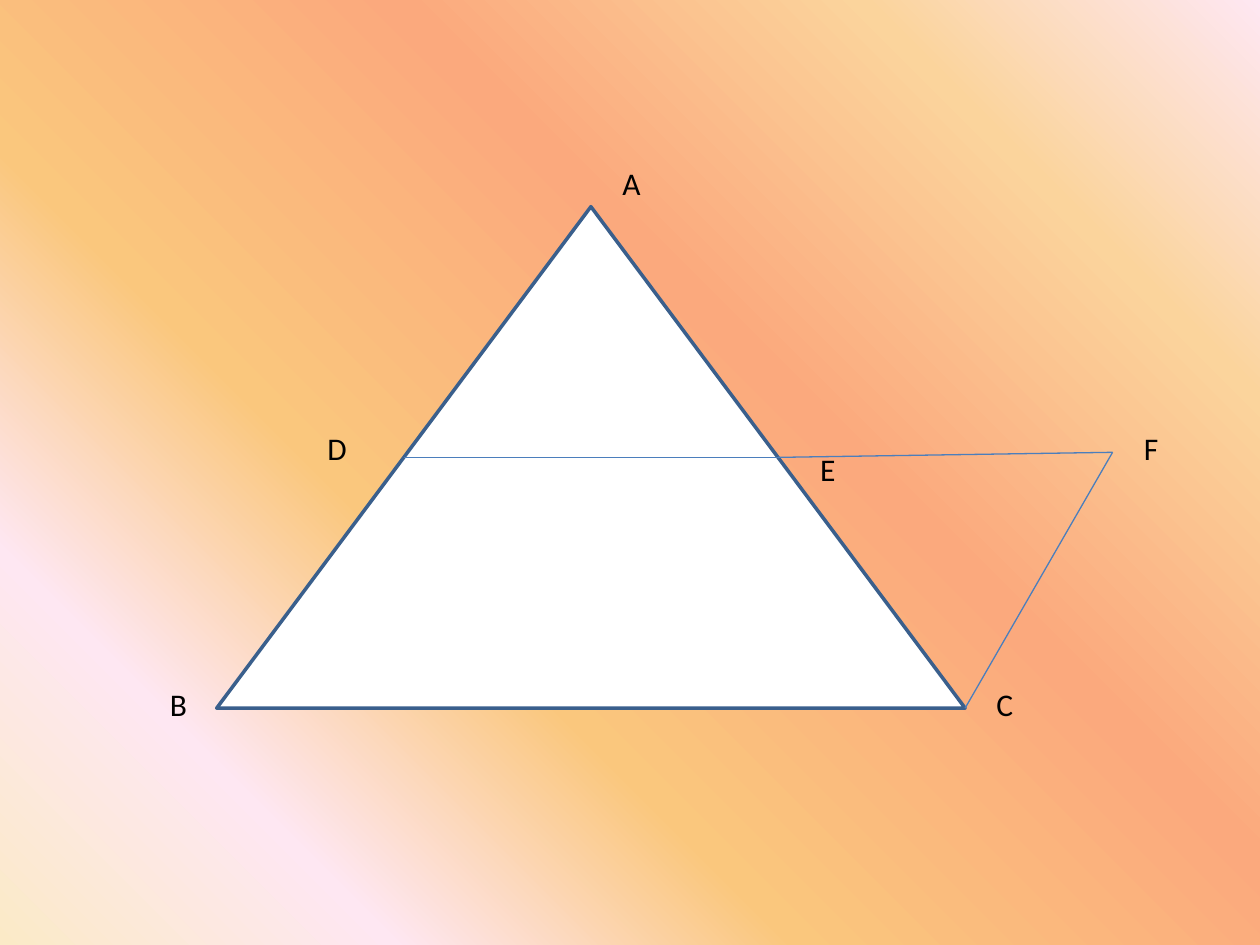
from copy import deepcopy

from pptx import Presentation
from pptx.dml.color import RGBColor
from pptx.enum.shapes import MSO_CONNECTOR, MSO_SHAPE
from pptx.enum.text import MSO_AUTO_SIZE
from pptx.oxml.ns import qn
from pptx.oxml.xmlchemy import OxmlElement
from pptx.util import Inches, Pt

WHITE = RGBColor(0xFF, 0xFF, 0xFF)
BLACK = RGBColor(0x00, 0x00, 0x00)
EDGE = RGBColor(0x3A, 0x5F, 0x8C)
THIN = RGBColor(0x4B, 0x7E, 0xBC)
FONT = "Calibri"

# Background stops: position in percent, colour
STOPS = [(0, "FBEAC7"), (18, "FEE7F2"), (36, "FAC77D"),
         (61, "FBA97D"), (82, "FBD49C"), (100, "FEE7F2")]

# Triangle ABC in inches; D and E are the midpoints of AB and AC
LEFT, TOP, WIDTH, HEIGHT = 1.72, 1.64, 5.94, 3.98
MIDDLE = TOP + HEIGHT / 2
POINTS = {
    "C": (LEFT + WIDTH, TOP + HEIGHT),
    "D": (LEFT + WIDTH / 4, MIDDLE),
    "E": (LEFT + WIDTH * 3 / 4, MIDDLE),
    "F": (8.83, 3.59),
}
SEGMENTS = ["DE", "EF", "FC"]

# Label: left, top, width, wrap
LABELS = {
    "A": (4.84, 1.25, 0.39, True),
    "B": (1.25, 5.39, 0.31, True),
    "C": (7.81, 5.39, 0.31, True),
    "D": (2.5, 3.36, 0.39, True),
    "E": (6.41, 3.52, 0.39, True),
    "F": (8.98, 3.36, 0.32, False),
}
LABEL_HEIGHT = 0.4


def paint_background(slide):
    fill = slide.background.fill
    fill.gradient()
    fill.gradient_angle = 45
    stop_list = next(slide.element.iter(qn("a:gsLst")))
    for _ in STOPS[2:]:
        stop_list.append(deepcopy(stop_list[0]))
    for stop, (position, color) in zip(fill.gradient_stops, STOPS):
        stop.position = position / 100
        stop.color.rgb = RGBColor.from_string(color)


def add_triangle(slide):
    s = slide.shapes.add_shape(MSO_SHAPE.ISOSCELES_TRIANGLE,
                               *map(Inches, (LEFT, TOP, WIDTH, HEIGHT)))
    s.shadow.inherit = False
    s.fill.solid()
    s.fill.fore_color.rgb = WHITE
    s.line.color.rgb = EDGE
    s.line.width = Pt(2)


def add_segment(slide, start, end):
    line = slide.shapes.add_connector(
        MSO_CONNECTOR.STRAIGHT, *map(Inches, POINTS[start] + POINTS[end]))
    line.line.color.rgb = THIN
    line.line.width = Pt(0.75)
    line._element.spPr.append(OxmlElement("a:effectLst"))


def add_label(slide, text, left, top, width, wrap):
    s = slide.shapes.add_textbox(*map(Inches, (left, top, width, LABEL_HEIGHT)))
    tf = s.text_frame
    tf.text = text
    tf.word_wrap = wrap
    tf.auto_size = MSO_AUTO_SIZE.SHAPE_TO_FIT_TEXT
    font = tf.paragraphs[0].runs[0].font
    font.name, font.size = FONT, Pt(18)
    font.color.rgb = BLACK


def main():
    prs = Presentation()
    prs.slide_width, prs.slide_height = Inches(10), Inches(7.5)
    slide = prs.slides.add_slide(prs.slide_layouts[6])
    paint_background(slide)
    add_triangle(slide)
    for start, end in SEGMENTS:
        add_segment(slide, start, end)
    for text, place in LABELS.items():
        add_label(slide, text, *place)
    prs.save("out.pptx")


if __name__ == "__main__":
    main()
